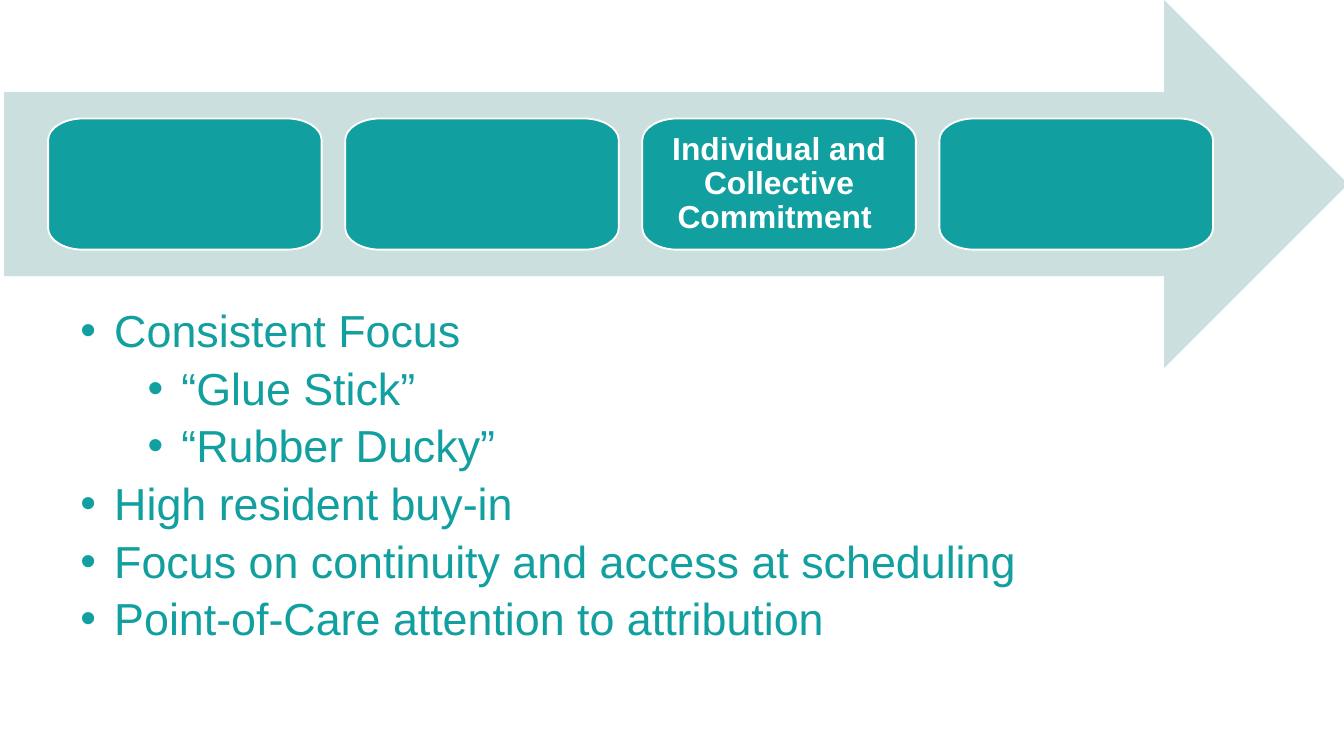
"""Build a slide with a four-step arrow and a bulleted list."""
from lxml import etree
from pptx import Presentation
from pptx import util as u
from pptx.dml.color import RGBColor
from pptx.enum import shapes, text
from pptx.oxml.ns import qn

COLORS = {"teal": "129F9F", "pale": "CCDFDF", "white": "FFFFFF"}
FONT = "Arial"
STEPS = ["", "", "Individual and Collective Commitment ", ""]
POINTS = [
    (1, "Consistent Focus"),
    (2, "“Glue Stick”"),
    (2, "“Rubber Ducky”"),
    (1, "High resident buy-in"),
    (1, "Focus on continuity and access at scheduling"),
    (1, "Point-of-Care attention to attribution"),
]


def color(name):
    """Return a palette colour."""
    return RGBColor.from_string(COLORS[name])


def add_run(paragraph, wording, size, color_name, bold=False):
    """Append a formatted run to a paragraph."""
    run = paragraph.add_run()
    run.text = wording
    run.font.name, run.font.size, run.font.bold = FONT, u.Pt(size), bold
    run.font.color.rgb = color(color_name)


def add_bullet(paragraph, margin, hanging):
    """Give a paragraph a round bullet with a hanging indent."""
    props = paragraph._p.get_or_add_pPr()
    props.set("marL", str(u.Cm(margin)))
    props.set("indent", str(-u.Cm(hanging)))
    bullet_font = etree.SubElement(props, qn("a:buFont"))
    bullet_font.set("typeface", FONT)
    bullet = etree.SubElement(props, qn("a:buChar"))
    bullet.set("char", "•")


def curve_corners(card):
    """Turn every other segment of a card's outline into a quarter ellipse."""
    outline = next(card._element.iter(qn("a:path")))
    ends = [(int(pt.get("x")), int(pt.get("y")))
            for pt in outline.iter(qn("a:pt"))]
    for index, segment in list(enumerate(outline))[1:9:2]:
        (x0, y0), (x1, y1) = ends[index - 1:index + 1]
        corner_x, corner_y = (x0, y1) if index % 4 == 1 else (x1, y0)
        controls = [(round(x + 0.55 * (corner_x - x)),
                     round(y + 0.55 * (corner_y - y)))
                    for x, y in ((x0, y0), (x1, y1))]
        curve = etree.Element(qn("a:cubicBezTo"))
        for x, y in controls + [(x1, y1)]:
            etree.SubElement(curve, qn("a:pt"), x=str(x), y=str(y))
        outline.replace(segment, curve)


def add_step(slide, left, top, width, height, wording):
    """Draw one step card in the given box."""
    rx, ry = 0.66, 0.41
    right, bottom = left + width, top + height
    corners = [
        (left, top + ry), (left + rx, top),
        (right - rx, top), (right, top + ry),
        (right, bottom - ry), (right - rx, bottom),
        (left + rx, bottom), (left, bottom - ry),
        (left, top + ry),
    ]
    first, *rest = [(u.Cm(x), u.Cm(y)) for x, y in corners]
    builder = slide.shapes.build_freeform(*first)
    builder.add_line_segments(rest, close=True)
    card = builder.convert_to_shape()
    curve_corners(card)
    card.shadow.inherit = False
    card.fill.solid()
    card.fill.fore_color.rgb = color("teal")
    card.line.color.rgb = color("white")
    card.line.width = u.Pt(1)
    if wording:
        frame = card.text_frame
        frame.word_wrap = True
        frame.vertical_anchor = text.MSO_ANCHOR.MIDDLE
        frame.margin_left = frame.margin_right = u.Cm(0.38)
        frame.margin_top = frame.margin_bottom = u.Cm(0.38)
        label = frame.paragraphs[0]
        label.alignment = text.PP_ALIGN.CENTER
        label.line_spacing = 0.9
        add_run(label, wording, 17, "white", bold=True)


def add_process(slide, left, top, width, height):
    """Draw the arrow and its row of step cards."""
    arrow = slide.shapes.add_shape(
        shapes.MSO_SHAPE.RIGHT_ARROW,
        u.Cm(left), u.Cm(top), u.Cm(width), u.Cm(height))
    arrow.shadow.inherit = False
    arrow.fill.solid()
    arrow.fill.fore_color.rgb = color("pale")
    arrow.line.fill.background()

    card_width, card_height, gap = 5.17, 2.48, 0.445
    card_top = top + (height - card_height) / 2
    for index, wording in enumerate(STEPS):
        card_left = left + 0.83 + index * (card_width + gap)
        add_step(slide, card_left, card_top, card_width, card_height, wording)


def add_points(slide, left, top, width, height):
    """Write the two-level bulleted list."""
    body = slide.shapes.add_textbox(
        u.Cm(left), u.Cm(top), u.Cm(width), u.Cm(height))
    frame = body.text_frame
    frame.word_wrap = True
    for index, (level, wording) in enumerate(POINTS):
        point = frame.add_paragraph() if index else frame.paragraphs[0]
        point.level = level
        add_bullet(point, 0.64 + 1.27 * level, 0.64)
        point.line_spacing = 0.9
        point.space_before = u.Pt(5 if index else 0)
        add_run(point, wording, 24, "teal")


def main():
    """Create and save the presentation."""
    deck = Presentation()
    deck.slide_width, deck.slide_height = u.Cm(25.4), u.Cm(14.29)
    slide = deck.slides.add_slide(deck.slide_layouts[6])
    add_points(slide, 0, 5.71, 25.6, 7.98)
    add_process(slide, 0.08, 0, 25.4, 6.96)
    deck.save("out.pptx")


if __name__ == "__main__":
    main()
